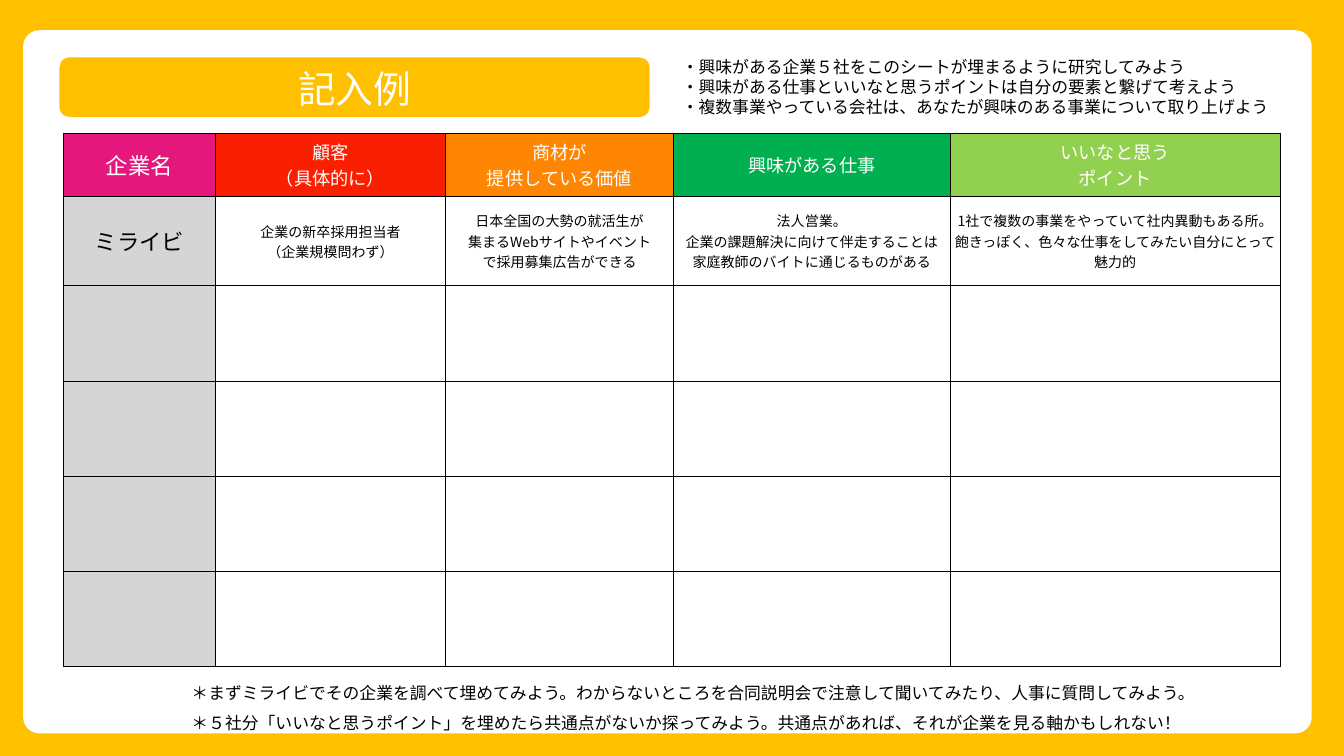
from dataclasses import dataclass

from lxml import etree
from pptx import Presentation
from pptx.dml.color import RGBColor
from pptx.enum.shapes import MSO_SHAPE
from pptx.enum.text import MSO_ANCHOR, MSO_AUTO_SIZE, PP_ALIGN
from pptx.oxml.ns import qn
from pptx.util import Inches, Pt

RECT, ROUND = MSO_SHAPE.RECTANGLE, MSO_SHAPE.ROUNDED_RECTANGLE
TOP, MIDDLE = MSO_ANCHOR.TOP, MSO_ANCHOR.MIDDLE
LEFT, CENTER = PP_ALIGN.LEFT, PP_ALIGN.CENTER
GROW = MSO_AUTO_SIZE.SHAPE_TO_FIT_TEXT


@dataclass(frozen=True)
class Theme:
    font: str = "Noto Sans CJK JP"
    gold: str = "FFC000"
    white: str = "FFFFFF"
    black: str = "000000"
    gray: str = "D5D5D5"
    title: int = 54
    name: int = 32
    head: int = 26
    note: int = 24
    cell: int = 20


@dataclass(frozen=True)
class Panel:
    box: tuple
    fill: str
    kind: int = RECT
    round: float = 0


@dataclass(frozen=True)
class Block:
    box: tuple
    text: str
    size: int
    color: str
    pad: float = 0.08
    wrap: bool = False
    align: int = LEFT
    anchor: int = TOP
    lines: float = 1.0


@dataclass(frozen=True)
class Column:
    width: float
    fill: str
    head: str
    sample: str


T = Theme()

PANELS = [
    Panel((0, 0, 26.67, 15), T.gold),
    Panel((0.46, 0.6, 25.57, 13.95), T.white, ROUND, 0.023),
    Panel((1.18, 1.14, 11.71, 1.18), T.gold, ROUND, 0.167),
]

TITLE = Block((4.04, 1.24, 6, 1.02), "記入例", T.title, T.white,
              0.06, True, CENTER, MIDDLE)
TIPS = Block(
    (13.45, 1.04, 11.94, 1.37),
    "・興味がある企業５社をこのシートが埋まるように研究してみよう\v"
    "・興味がある仕事といいなと思うポイントは自分の要素と繋げて考えよう\v"
    "・複数事業やっている会社は、あなたが興味のある事業について取り上げよう",
    T.note, T.black)
NOTES = Block(
    (3.72, 13.27, 20.35, 1.3),
    "＊まずミライビでその企業を調べて埋めてみよう。"
    "わからないところを合同説明会で注意して聞いてみたり、人事に質問してみよう。\v"
    "＊５社分「いいなと思うポイント」を埋めたら共通点がないか探ってみよう。"
    "共通点があれば、それが企業を見る軸かもしれない！",
    T.note, T.black, lines=1.5)

COLUMNS = [
    Column(3.02, "E4177D", "企業名", "ミライビ"),
    Column(4.56, "FA1F00", "顧客\v（具体的に）",
           "企業の新卒採用担当者\v（企業規模問わず）"),
    Column(4.53, "FE8602", "商材が\v提供している価値",
           "日本全国の大勢の就活生が\v集まるWebサイトやイベント\v"
           "で採用募集広告ができる"),
    Column(5.48, "00B050", "興味がある仕事",
           "法人営業。\v企業の課題解決に向けて伴走することは\v"
           "家庭教師のバイトに通じるものがある"),
    Column(6.56, "92D050", "いいなと思う\vポイント",
           "1社で複数の事業をやっていて社内異動もある所。\v"
           "飽きっぽく、色々な仕事をしてみたい自分にとって魅力的"),
]
ROWS = [1.26, 1.77] + [1.89] * 4


def apply(obj, values: dict) -> None:
    for key, value in values.items():
        setattr(obj, key, value)


def paint(fill, color: str) -> None:
    fill.solid()
    fill.fore_color.rgb = RGBColor.from_string(color)


def write(para, text: str, size: int, color: str, align: int) -> None:
    para.text = text
    para.alignment = align
    for run in para.runs:
        apply(run.font, {"size": Pt(size), "bold": False, "name": T.font})
        run.font.color.rgb = RGBColor.from_string(color)
        # East Asian typeface
        etree.SubElement(run.font._element, qn("a:ea"), typeface=T.font)


def add_panel(slide, panel: Panel) -> None:
    shape = slide.shapes.add_shape(panel.kind, *map(Inches, panel.box))
    if panel.kind == ROUND:
        shape.adjustments[0] = panel.round
    paint(shape.fill, panel.fill)
    shape.line.fill.background()
    shape.shadow.inherit = False


def fill_holder(shape, block: Block) -> None:
    # Bring the placeholder in front of the panels
    shape.element.getparent().append(shape.element)
    apply(shape, dict(zip(("left", "top", "width", "height"),
                          map(Inches, block.box))))
    frame, pad = shape.text_frame, Inches(block.pad)
    apply(frame, {"margin_left": pad, "margin_right": pad,
                  "margin_top": pad, "margin_bottom": pad,
                  "word_wrap": block.wrap, "auto_size": GROW,
                  "vertical_anchor": block.anchor})
    para = frame.paragraphs[0]
    props = para._p.get_or_add_pPr()
    props.set("marL", "0")
    props.set("indent", "0")
    etree.SubElement(props, qn("a:buNone"))
    write(para, block.text, block.size, block.color, block.align)
    apply(para, {"space_before": Pt(0), "line_spacing": block.lines})


def add_edges(cell) -> None:
    props = cell._tc.get_or_add_tcPr()
    for side in ("lnL", "lnR", "lnT", "lnB"):
        line = etree.SubElement(props, qn("a:" + side), w=str(Pt(1)))
        solid = etree.SubElement(line, qn("a:solidFill"))
        etree.SubElement(solid, qn("a:srgbClr"), val=T.black)


def add_sheet(slide) -> None:
    width = sum(col.width for col in COLUMNS)
    box = map(Inches, (1.26, 2.64, width, sum(ROWS)))
    table = slide.shapes.add_table(len(ROWS), len(COLUMNS), *box).table
    apply(table, {"first_row": False, "horz_banding": False})
    for row, height in zip(table.rows, ROWS):
        row.height = Inches(height)
    pad = Inches(0.06)
    for c, col in enumerate(COLUMNS):
        table.columns[c].width = Inches(col.width)
        for r in range(len(ROWS)):
            cell = table.cell(r, c)
            add_edges(cell)
            body = T.white if c else T.gray
            paint(cell.fill, body if r else col.fill)
            apply(cell, {"margin_left": pad, "margin_right": pad,
                         "margin_top": pad, "margin_bottom": pad,
                         "vertical_anchor": MIDDLE})
        # Heading and worked example
        looks = ((col.head, T.head, T.white), (col.sample, T.cell, T.black))
        for r, (text, size, color) in enumerate(looks):
            write(table.cell(r, c).text_frame.paragraphs[0], text,
                  size if c else T.name, color, CENTER)


def main() -> None:
    deck = Presentation()
    apply(deck, {"slide_width": Inches(26.67), "slide_height": Inches(15)})
    slide = deck.slides.add_slide(deck.slide_layouts[3])
    holders = list(slide.placeholders)
    for panel in PANELS:
        add_panel(slide, panel)
    add_sheet(slide)
    for shape, block in zip(holders, (TITLE, TIPS, NOTES)):
        fill_holder(shape, block)
    deck.save("out.pptx")


if __name__ == "__main__":
    main()
